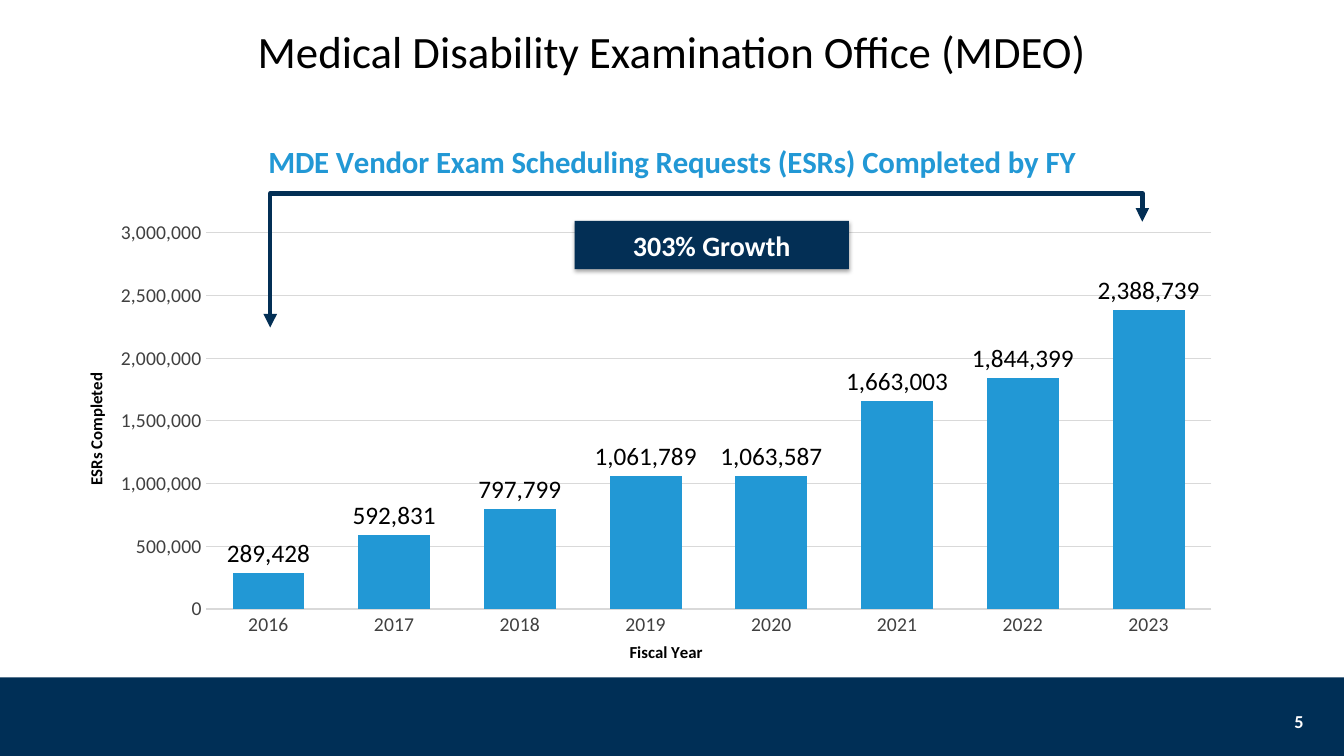
import pptx
import pptx.chart.data
import pptx.dml.color
import pptx.enum.chart
import pptx.enum.shapes
import pptx.enum.text
import pptx.oxml
import pptx.oxml.ns
import pptx.util

Inches, Pt = pptx.util.Inches, pptx.util.Pt
RGBColor = pptx.dml.color.RGBColor
MSO_SHAPE = pptx.enum.shapes.MSO_SHAPE
ANCHOR = pptx.enum.text.MSO_ANCHOR

FONT = "Calibri"
BLACK = RGBColor(0x00, 0x00, 0x00)
WHITE = RGBColor(0xFF, 0xFF, 0xFF)
FOOTER_NAVY = RGBColor(0x00, 0x2F, 0x56)
GROWTH_NAVY = RGBColor(0x03, 0x2F, 0x55)
BAR_BLUE = RGBColor(0x22, 0x98, 0xD5)
TICK_GRAY = RGBColor(0x40, 0x40, 0x40)
GRID_GRAY = RGBColor(0xD9, 0xD9, 0xD9)

ESRS_BY_YEAR = {
    "2016": 289428, "2017": 592831, "2018": 797799, "2019": 1061789,
    "2020": 1063587, "2021": 1663003, "2022": 1844399, "2023": 2388739,
}
PLOT_AREA = {"x": 0.105, "y": 0.208, "w": 0.852, "h": 0.686}


def xml_part(prefix, markup):
    """Parse markup whose root tag uses the given namespace prefix."""
    tag, rest = markup[1:].split(" ", 1)
    return pptx.oxml.parse_xml(f"<{tag} {pptx.oxml.ns.nsdecls(prefix)} {rest}")


def style_font(font, size, color, bold=False):
    font.name, font.size, font.bold = FONT, Pt(size), bold
    font.color.rgb = color


def write_line(frame, text, size, color, bold=False, anchor=ANCHOR.MIDDLE):
    frame.word_wrap = True
    frame.vertical_anchor = anchor
    frame.text = text
    para = frame.paragraphs[0]
    para.alignment = pptx.enum.text.PP_ALIGN.CENTER
    style_font(para.runs[0].font, size, color, bold)
    return para


def add_title(page, left, top, width, height):
    box = page.shapes.add_textbox(Inches(left), Inches(top), Inches(width), Inches(height))
    para = write_line(box.text_frame, "Medical Disability Examination Office (MDEO)",
                      32, BLACK, anchor=ANCHOR.TOP)
    para.line_spacing = 0.9


def add_footer(page, left, top, width, height):
    band = page.shapes.add_shape(MSO_SHAPE.RECTANGLE, Inches(left), Inches(top),
                                 Inches(width), Inches(height))
    band.shadow.inherit = False
    band.fill.solid()
    band.fill.fore_color.rgb = FOOTER_NAVY
    band.line.fill.background()

    # Page number near the right edge
    number = page.shapes.add_textbox(Inches(left + width - 0.66), Inches(top + 0.11),
                                     Inches(0.43), Inches(0.66))
    write_line(number.text_frame, "5", 13, WHITE, bold=True)


def style_axis(axis, title):
    axis.has_title = True
    axis.axis_title.text_frame.text = title
    style_font(axis.axis_title.text_frame.paragraphs[0].runs[0].font, 12, BLACK, bold=True)
    axis.major_tick_mark = axis.minor_tick_mark = pptx.enum.chart.XL_TICK_MARK.NONE
    style_font(axis.tick_labels.font, 14, TICK_GRAY)
    axis.format.line.fill.background()


def add_esr_chart(page, left, top, width, height):
    data = pptx.chart.data.CategoryChartData()
    data.categories = list(ESRS_BY_YEAR)
    data.add_series("Series 1", list(ESRS_BY_YEAR.values()))
    chart = page.shapes.add_chart(
        pptx.enum.chart.XL_CHART_TYPE.COLUMN_CLUSTERED,
        Inches(left), Inches(top), Inches(width), Inches(height), data).chart
    style_font(chart.font, 10, BLACK)
    chart.has_legend = False

    # Chart title
    chart.has_title = True
    chart.chart_title.include_in_layout = False
    title = chart.chart_title.text_frame
    title.text = "MDE Vendor Exam Scheduling Requests (ESRs) Completed by FY"
    style_font(title.paragraphs[0].runs[0].font, 22, BAR_BLUE, bold=True)

    # Axes and gridlines
    style_axis(chart.category_axis, "Fiscal Year")
    values = chart.value_axis
    style_axis(values, "ESRs Completed")
    values.minimum_scale, values.maximum_scale, values.major_unit = 0, 3000000, 500000
    values.tick_labels.number_format = "#,##0"
    values.tick_labels.number_format_is_linked = False
    values.major_gridlines.format.line.color.rgb = GRID_GRAY
    values.major_gridlines.format.line.width = Pt(0.75)

    # Columns and their labels
    plot = chart.plots[0]
    plot.gap_width = 75
    plot.vary_by_categories = False
    columns = plot.series[0]
    columns.format.fill.solid()
    columns.format.fill.fore_color.rgb = BAR_BLUE
    labels = columns.data_labels
    labels.show_value = True
    labels.position = pptx.enum.chart.XL_LABEL_POSITION.OUTSIDE_END
    labels.number_format = "###,###"
    labels.number_format_is_linked = False
    style_font(labels.font, 18, BLACK)

    # Fixed inner plot area
    plot_area = chart.element.find(".//" + pptx.oxml.ns.qn("c:plotArea"))
    for layout in plot_area.findall(pptx.oxml.ns.qn("c:layout")):
        plot_area.remove(layout)
    modes = '<c:xMode val="edge"/><c:yMode val="edge"/>'
    sizes = "".join(f'<c:{key} val="{share}"/>' for key, share in PLOT_AREA.items())
    plot_area.insert(0, xml_part("c", '<c:layout ><c:manualLayout><c:layoutTarget val="inner"/>'
                                      f'{modes}{sizes}</c:manualLayout></c:layout>'))


def add_growth_bracket(page, left, top, width, left_drop, right_drop):
    right = left + width
    builder = page.shapes.build_freeform(Inches(left), Inches(top + left_drop))
    builder.add_line_segments(
        [(Inches(x), Inches(y))
         for x, y in ((left, top), (right, top), (right, top + right_drop))], close=False)
    bracket = builder.convert_to_shape()
    bracket.shadow.inherit = False
    bracket.fill.background()
    bracket.line.color.rgb = GROWTH_NAVY
    bracket.line.width = Pt(3.25)
    outline = bracket.element.spPr.find(pptx.oxml.ns.qn("a:ln"))
    for end in ("headEnd", "tailEnd"):
        outline.append(xml_part("a", f'<a:{end} type="triangle"/>'))


def add_growth_badge(page, left, top, width, height):
    badge = page.shapes.add_shape(MSO_SHAPE.ROUNDED_RECTANGLE, Inches(left), Inches(top),
                                  Inches(width), Inches(height))
    badge.adjustments[0] = 0
    badge.fill.solid()
    badge.fill.fore_color.rgb = GROWTH_NAVY
    badge.line.fill.background()
    badge.text_frame.margin_left = badge.text_frame.margin_right = 0
    write_line(badge.text_frame, "303% Growth", 20, WHITE, bold=True)

    # Soft shadow straight below
    badge.element.spPr.append(xml_part(
        "a", f'<a:effectLst ><a:outerShdw blurRad="{Pt(3.1)}" dist="{Pt(1.8)}" dir="5400000" '
             'rotWithShape="0"><a:srgbClr val="000000"><a:alpha val="35000"/></a:srgbClr>'
             '</a:outerShdw></a:effectLst>'))


def main():
    deck = pptx.Presentation()
    deck.slide_width, deck.slide_height = Inches(13.33), Inches(7.5)
    page = deck.slides.add_slide(deck.slide_layouts[6])
    add_footer(page, 0, 6.72, 13.33, 0.8)
    add_title(page, 0, 0.25, 13.33, 0.84)
    add_esr_chart(page, 0.81, 1.18, 11.71, 5.44)
    add_growth_bracket(page, 2.68, 1.92, 8.65, 1.33, 0.28)
    add_growth_badge(page, 5.7, 2.19, 2.72, 0.48)
    deck.save("out.pptx")


if __name__ == "__main__":
    main()
